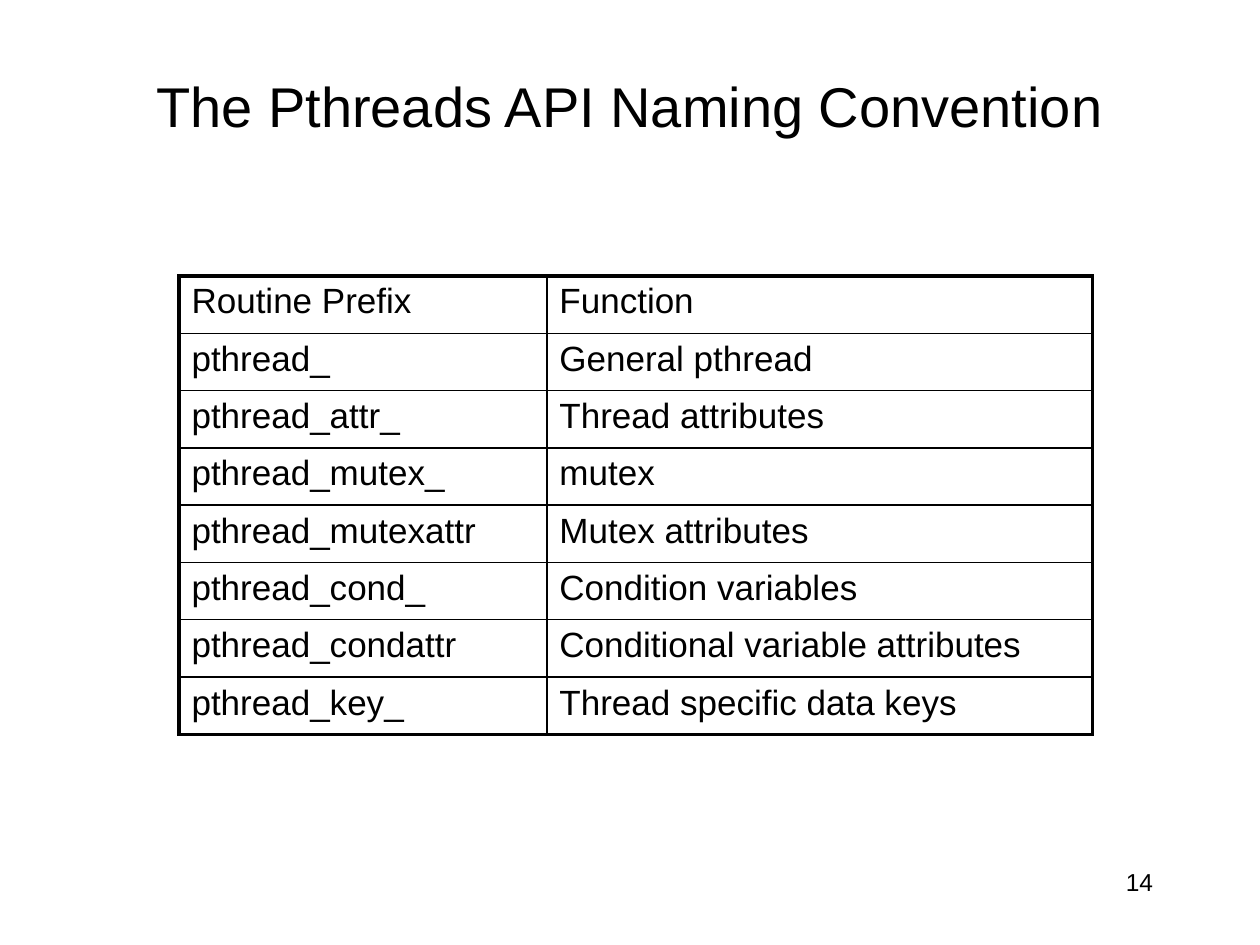
from lxml.etree import SubElement
from pptx import Presentation
from pptx.dml.color import RGBColor
from pptx.enum.text import MSO_ANCHOR as Anchor, PP_ALIGN as Align
from pptx.oxml.ns import qn
from pptx.util import Inches, Pt

COLORS = {"ink": "000000", "paper": "FFFFFF"}
FONT = "Arial"
OUTER, INNER = 2.25, 1
COLUMN_WIDTHS = (2.92, 4.33)
TABLE_HEIGHT = 3.64
NAMING = [
    ("Routine Prefix", "Function"),
    ("pthread_", "General pthread"),
    ("pthread_attr_", "Thread attributes"),
    ("pthread_mutex_", "mutex"),
    ("pthread_mutexattr", "Mutex attributes"),
    ("pthread_cond_", "Condition variables"),
    ("pthread_condattr", "Conditional variable attributes"),
    ("pthread_key_", "Thread specific data keys"),
]


def write(frame, text, size, align=Align.LEFT):
    frame.text = text
    paragraph = frame.paragraphs[0]
    paragraph.alignment = align
    paragraph.font.name = FONT
    paragraph.font.size = Pt(size)
    paragraph.font.color.rgb = RGBColor.from_string(COLORS["ink"])


def add_label(slide, box, text, size, align, anchor=Anchor.TOP):
    frame = slide.shapes.add_textbox(*map(Inches, box)).text_frame
    frame.word_wrap = True
    frame.vertical_anchor = anchor
    write(frame, text, size, align)


def set_borders(cell, widths):
    properties = cell._tc.get_or_add_tcPr()
    for side, width in widths.items():
        line = SubElement(properties, qn(f"a:ln{side}"), w=str(Pt(width)))
        fill = SubElement(line, qn("a:solidFill"))
        SubElement(fill, qn("a:srgbClr"), val=COLORS["ink"])


def add_naming_table(slide, left, top):
    row_count, column_count = len(NAMING), len(COLUMN_WIDTHS)
    table = slide.shapes.add_table(
        row_count, column_count, Inches(left), Inches(top),
        Inches(sum(COLUMN_WIDTHS)), Inches(TABLE_HEIGHT)).table
    table.first_row = table.horz_banding = False
    for column, width in zip(table.columns, COLUMN_WIDTHS):
        column.width = Inches(width)
    for r, entries in enumerate(NAMING):
        for c, text in enumerate(entries):
            cell = table.cell(r, c)
            write(cell.text_frame, text, 20)
            on_edge = {"L": c == 0, "R": c == column_count - 1,
                       "T": r == 0, "B": r == row_count - 1}
            set_borders(cell, {side: OUTER if edge else INNER
                               for side, edge in on_edge.items()})
            cell.fill.solid()
            cell.fill.fore_color.rgb = RGBColor.from_string(COLORS["paper"])


def main():
    deck = Presentation()
    deck.slide_width, deck.slide_height = Inches(10), Inches(7.5)
    slide = deck.slides.add_slide(deck.slide_layouts[6])
    add_label(slide, (0.75, 0.42, 8.5, 0.83),
              "The Pthreads API Naming Convention", 32, Align.CENTER, Anchor.MIDDLE)
    add_naming_table(slide, 1.42, 2.19)
    add_label(slide, (7.17, 6.83, 2.08, 0.5), "14", 14, Align.RIGHT)
    deck.save("out.pptx")


if __name__ == "__main__":
    main()
